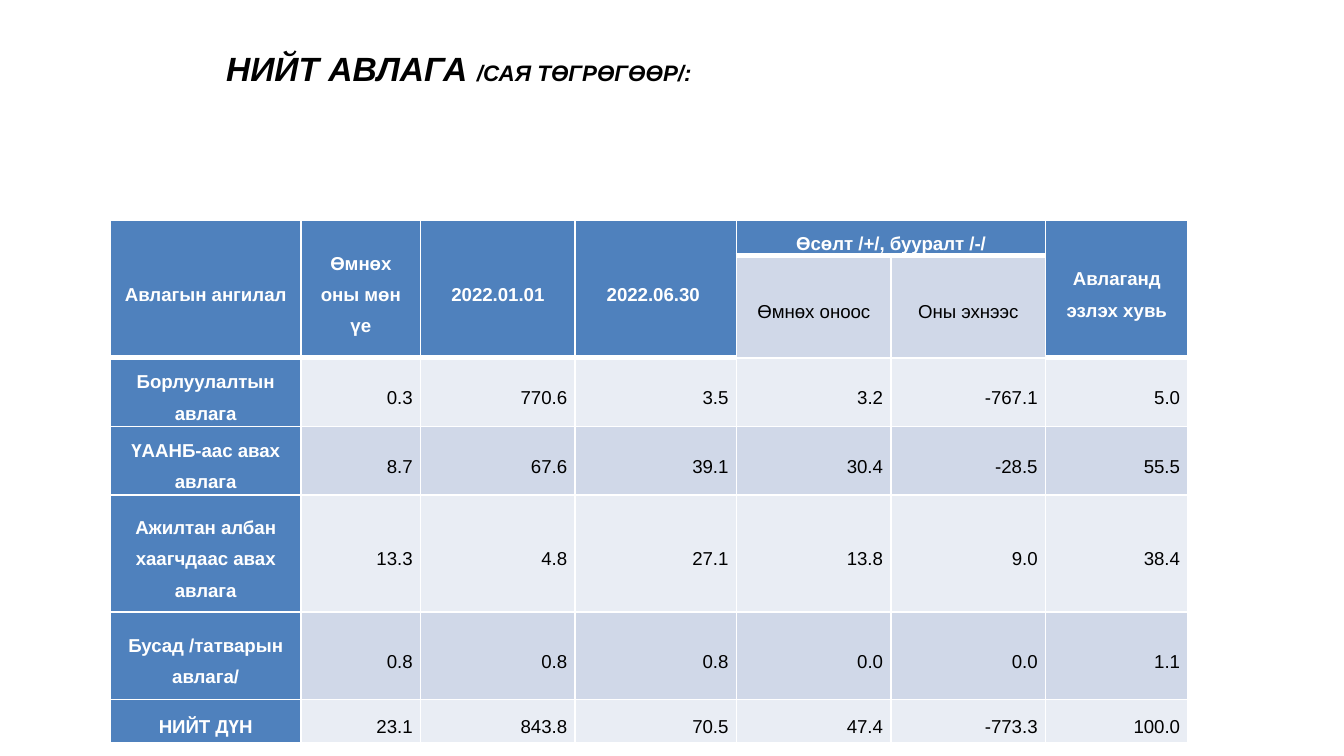
from lxml.etree import SubElement
from pptx import Presentation
from pptx.dml.color import RGBColor
from pptx.enum.text import MSO_ANCHOR, PP_ALIGN
from pptx.oxml.ns import qn
from pptx.util import Inches, Pt

BLUE, BAND_DARK, BAND_LIGHT = "4F81BD", "D0D8E8", "E9EDF4"
WHITE, BLACK = "FFFFFF", "000000"


def rgb(value):
    return RGBColor.from_string(value)


def add_borders(cell, bottom_width):
    """White 1 pt lines on all sides, with a bottom line of its own width."""
    properties = cell._tc.get_or_add_tcPr()
    for side, width in (("lnL", 1), ("lnR", 1), ("lnT", 1), ("lnB", bottom_width)):
        line = SubElement(properties, qn(f"a:{side}"), w=str(Pt(width)))
        line_fill = SubElement(line, qn("a:solidFill"))
        SubElement(line_fill, qn("a:srgbClr"), val=WHITE)


prs = Presentation()
prs.slide_width, prs.slide_height = Inches(10), Inches(10 * 9 / 16)
slide = prs.slides.add_slide(prs.slide_layouts[6])

title = slide.shapes.add_textbox(Inches(0.16), Inches(0.31), Inches(6.51), Inches(0.5))
title.text_frame.word_wrap = True
heading = title.text_frame.paragraphs[0]
heading.alignment = PP_ALIGN.CENTER
heading.font.name = "Arial"
heading.font.bold = heading.font.italic = True
heading.font.color.rgb = rgb(BLACK)
for text, size in (("НИЙТ АВЛАГА ", 18), ("/САЯ ТӨГРӨГӨӨР/:", 12)):
    run = heading.add_run()
    run.text = text
    run.font.size = Pt(size)

receivables = [
    ["Авлагын ангилал", "Өмнөх оны мөн үе", "2022.01.01", "2022.06.30 ",
     "Өсөлт /+/, бууралт /-/", "", "Авлаганд эзлэх хувь"],
    ["", "", "", "", "Өмнөх оноос", "Оны эхнээс", ""],
    ["Борлуулалтын авлага", "0.3", "770.6", "3.5", "3.2", "-767.1", "5.0"],
    ["ҮААНБ-аас авах авлага", "8.7", "67.6", "39.1", "30.4", "-28.5", "55.5"],
    ["Ажилтан албан хаагчдаас авах авлага", "13.3", "4.8", "27.1", "13.8", "9.0", "38.4"],
    ["Бусад /татварын авлага/", "0.8", "0.8", "0.8", "0.0", "0.0", "1.1"],
    ["НИЙТ ДҮН", "23.1", "843.8", "70.5", "47.4", "-773.3", "100.0"],
]
column_widths = [1.42, 0.89, 1.15, 1.2, 1.15, 1.15, 1.06]
row_heights = [0.23, 0.44, 0.43, 0.43, 0.87, 0.65, 0.32]
change_columns = (4, 5)

table_height = Inches(3.51)
table_frame = slide.shapes.add_table(
    len(row_heights), len(column_widths), Inches(0.82), Inches(1.64),
    Inches(sum(column_widths)), table_height)
table = table_frame.table
for column, width in zip(table.columns, column_widths):
    column.width = Inches(width)
for row, height in zip(table.rows, row_heights):
    row.height = Inches(height)
table_frame.height = table_height

for r, values in enumerate(receivables):
    for c, text in enumerate(values):
        cell = table.cell(r, c)
        in_header = r == 0 or (r == 1 and c not in change_columns)
        emphasized = in_header or c == 0
        add_borders(cell, 3 if in_header else 1)
        cell.fill.solid()
        band = BAND_DARK if r % 2 else BAND_LIGHT
        cell.fill.fore_color.rgb = rgb(BLUE if emphasized else band)
        cell.vertical_anchor = MSO_ANCHOR.MIDDLE
        cell.margin_left = cell.margin_right = Inches(0.06)
        cell.margin_top, cell.margin_bottom = Inches(0.01), 0
        cell.text = text
        paragraph = cell.text_frame.paragraphs[0]
        paragraph.alignment = PP_ALIGN.CENTER if r < 2 or c == 0 else PP_ALIGN.RIGHT
        paragraph.line_spacing = 1.5
        paragraph.font.name = "Arial"
        paragraph.font.size = Pt(10)
        paragraph.font.bold = emphasized
        paragraph.font.color.rgb = rgb(WHITE if emphasized else BLACK)

for c in range(len(column_widths)):
    if c not in change_columns:
        table.cell(0, c).merge(table.cell(1, c))
table.cell(0, 4).merge(table.cell(0, 5))

prs.save("out.pptx")
